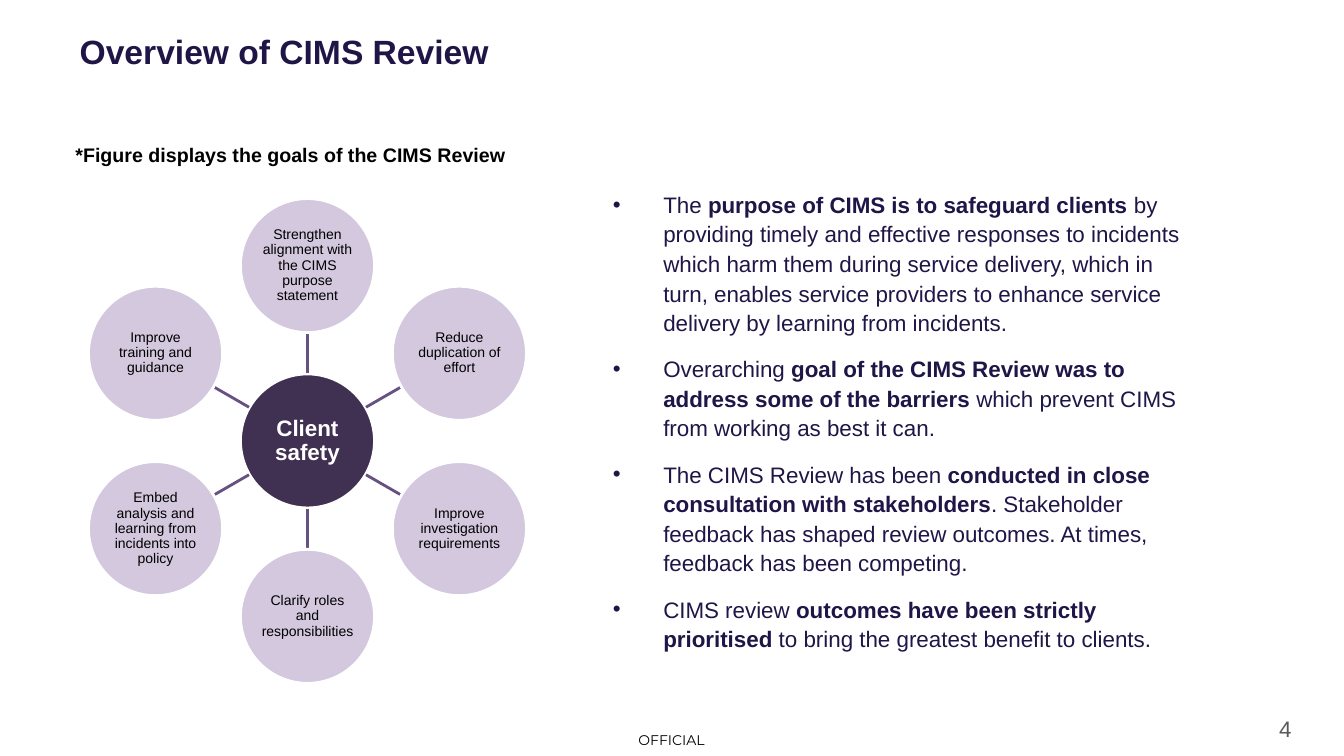
import math
from lxml import etree
from pptx import Presentation
from pptx import util as u
from pptx.dml.color import RGBColor
from pptx.enum import shapes, text
from pptx.oxml import ns

NAVY, BLACK, WHITE = "201547", "000000", "FFFFFF"
PLUM, LILAC, SPOKE = "403152", "D3C8DE", "675082"

TITLE = "Overview of CIMS Review"
CAPTION = "*Figure displays the goals of the CIMS Review"
MARKING = "OFFICIAL"
PAGE = "4"
HUB = "Client safety"
GOALS = [
    "Strengthen alignment with the CIMS purpose statement",
    "Reduce duplication of effort",
    "Improve investigation requirements",
    "Clarify roles and responsibilities",
    "Embed analysis and learning from incidents into policy",
    "Improve training and guidance",
]
POINTS = [
    ("The ", "purpose of CIMS is to safeguard clients ",
     "by providing timely and effective responses to incidents which harm them "
     "during service delivery, which in turn, enables service providers to "
     "enhance service delivery by learning from incidents."),
    ("Overarching ", "goal of the CIMS Review was to address some of the barriers ",
     "which prevent CIMS from working as best it can."),
    ("The CIMS Review has been ", "conducted in close consultation with stakeholders",
     ". Stakeholder feedback has shaped review outcomes. At times, "
     "feedback has been competing."),
    ("CIMS review ", "outcomes have been strictly prioritised ",
     "to bring the greatest benefit to clients."),
]

CENTRE_X, CENTRE_Y = 3.05, 4.375
DIAMETER, RING = 1.33, 1.74
SPOKE_START, SPOKE_END = 0.67, 1.07

LEFT, CENTRE, RIGHT = text.PP_ALIGN.LEFT, text.PP_ALIGN.CENTER, text.PP_ALIGN.RIGHT
TOP, MIDDLE = text.MSO_ANCHOR.TOP, text.MSO_ANCHOR.MIDDLE


def colour(value):
    return RGBColor.from_string(value)


def write(shape, paragraphs, size, color=BLACK, bold=False, font="Arial", align=LEFT,
          anchor=TOP, inset=None, spacing=1.0, gap=0, bullet=None):
    frame = shape.text_frame
    frame.word_wrap = True
    frame.vertical_anchor = anchor
    if inset is not None:
        frame.margin_left = frame.margin_right = u.Inches(inset)
        frame.margin_top = frame.margin_bottom = u.Inches(inset)
    for index, pieces in enumerate(paragraphs):
        line = frame.add_paragraph() if index else frame.paragraphs[0]
        line.alignment = align
        line.line_spacing = spacing
        line.space_before = u.Pt(gap if index else 0)
        line.space_after = u.Pt(gap)
        if bullet:
            properties = line._p.get_or_add_pPr()
            properties.set("marL", str(u.Inches(0.5)))
            properties.set("indent", str(u.Inches(-0.5)))
            etree.SubElement(properties, ns.qn("a:buFont"), typeface="Arial")
            etree.SubElement(properties, ns.qn("a:buChar"), char=bullet)
        for position, words in enumerate(pieces):
            run = line.add_run()
            run.text = words
            run.font.name = font
            run.font.size = u.Pt(size)
            run.font.bold = bold or position == 1
            run.font.color.rgb = colour(color)


def add_text(slide, box, paragraphs, size, **style):
    write(slide.shapes.add_textbox(*map(u.Inches, box)), paragraphs, size, **style)


def on_wheel(radius, angle):
    return CENTRE_X + radius * math.sin(angle), CENTRE_Y - radius * math.cos(angle)


def add_circle(slide, x, y, words, fill, size, **style):
    corner = (x - DIAMETER / 2, y - DIAMETER / 2)
    circle = slide.shapes.add_shape(
        shapes.MSO_SHAPE.OVAL, *map(u.Inches, (*corner, DIAMETER, DIAMETER)))
    circle.shadow.inherit = False
    circle.fill.solid()
    circle.fill.fore_color.rgb = colour(fill)
    circle.line.color.rgb = colour(WHITE)
    circle.line.width = u.Pt(2)
    write(circle, [[words]], size, align=CENTRE, anchor=MIDDLE, inset=0.01,
          spacing=0.9, **style)


def add_spoke(slide, angle):
    ends = (*on_wheel(SPOKE_START, angle), *on_wheel(SPOKE_END, angle))
    spoke = slide.shapes.add_connector(
        shapes.MSO_CONNECTOR.STRAIGHT, *map(u.Inches, ends))
    spoke.line.color.rgb = colour(SPOKE)
    spoke.line.width = u.Pt(2)
    etree.SubElement(spoke._element.spPr, ns.qn("a:effectLst"))


def main():
    deck = Presentation()
    deck.slide_width, deck.slide_height = u.Inches(13.33), u.Inches(7.5)
    slide = deck.slides.add_slide(deck.slide_layouts[6])

    add_text(slide, (6.15, 7.19, 1.02, 0.31), [[MARKING]], 10, font="Montserrat",
             align=CENTRE, anchor=MIDDLE, inset=0)
    add_text(slide, (0.79, 0, 9.45, 0.98), [[TITLE]], 24, color=NAVY, bold=True,
             anchor=MIDDLE, inset=0, spacing=1.1)
    add_text(slide, (0.65, 1.37, 4.86, 0.34), [[CAPTION]], 14, bold=True)

    add_circle(slide, CENTRE_X, CENTRE_Y, HUB, PLUM, 16, color=WHITE, bold=True)
    for index, goal in enumerate(GOALS):
        angle = index * math.tau / len(GOALS)
        add_spoke(slide, angle)
        add_circle(slide, *on_wheel(RING, angle), goal, LILAC, 10)

    add_text(slide, (5.98, 1.82, 5.88, 4.73), POINTS, 16, color=NAVY,
             spacing=1.1, gap=6, bullet="•")
    add_text(slide, (12.02, 7.09, 0.79, 0.41), [[PAGE]], 16, color="595959",
             align=RIGHT, inset=0)
    deck.save("out.pptx")


if __name__ == "__main__":
    main()
